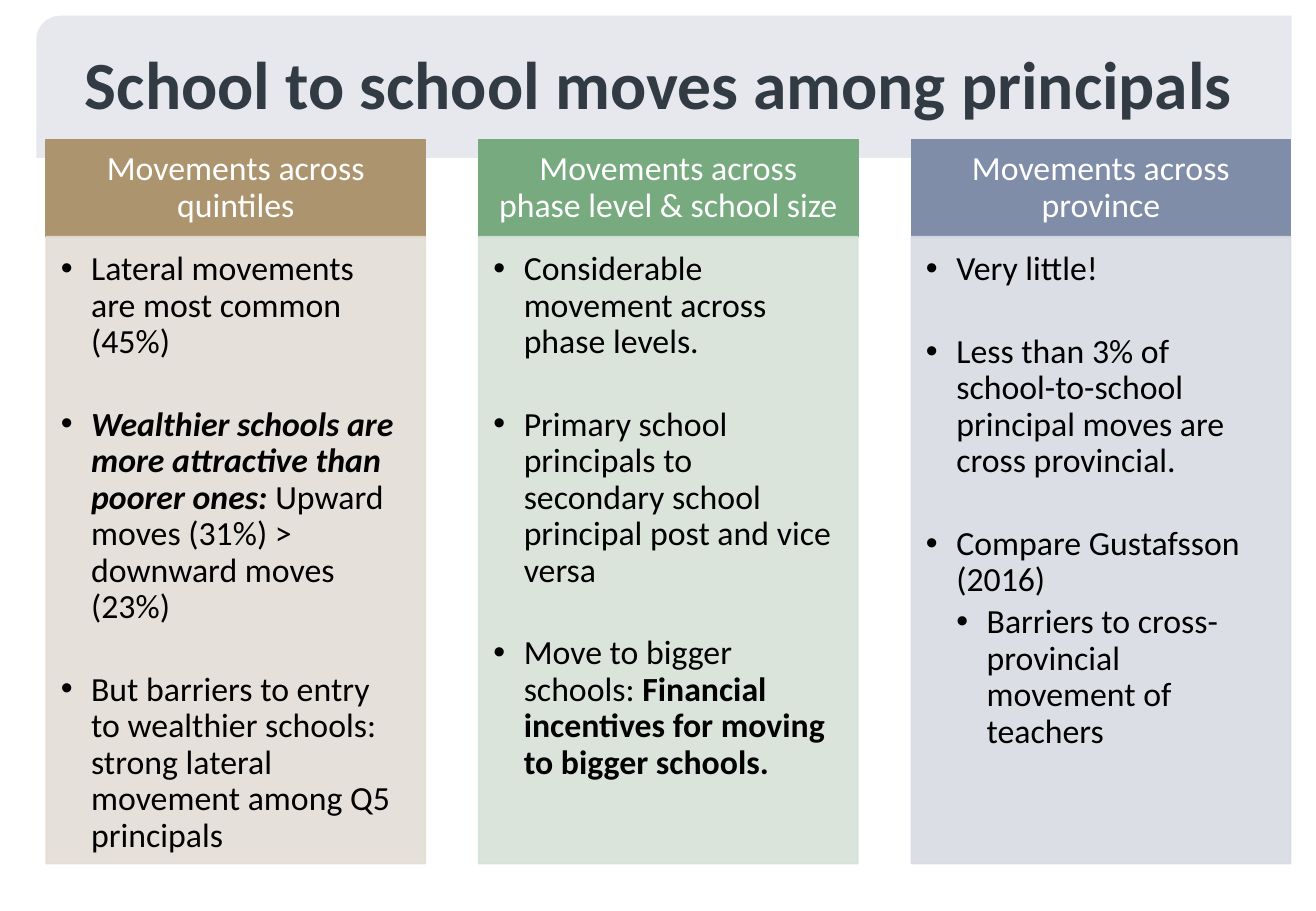
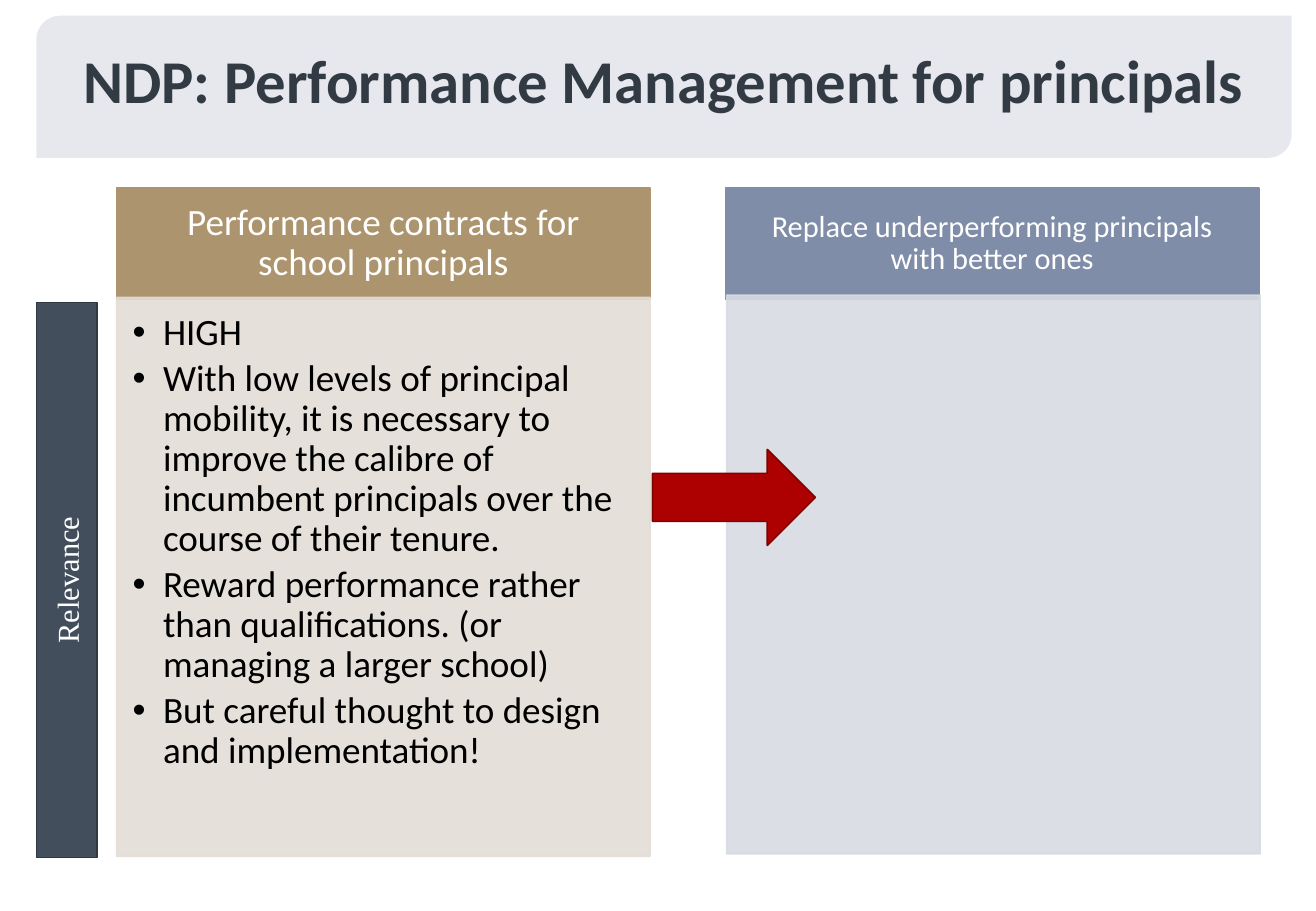
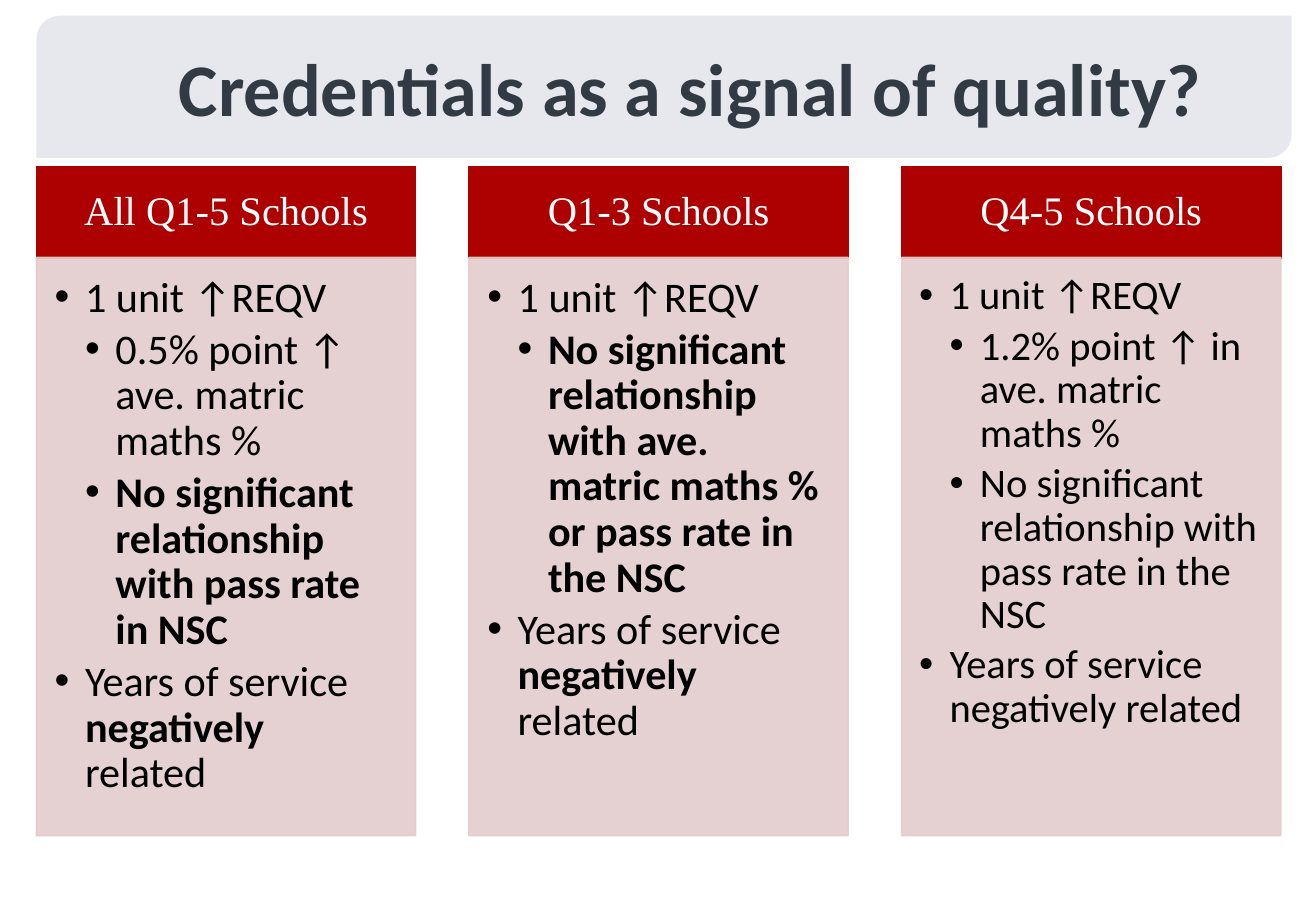
from lxml.etree import SubElement
from pptx import Presentation
from pptx.dml.color import RGBColor
from pptx.enum.shapes import MSO_SHAPE as Shape
from pptx.enum.text import MSO_ANCHOR as Anchor, MSO_AUTO_SIZE as AutoSize, PP_ALIGN as Align
from pptx.oxml.ns import qn
from pptx.util import Inches, Pt

COLORS = {
    "band": "E6E8EE", "title": "323B44", "white": "FFFFFF", "black": "000000",
    "tan": "AC956E", "tan_light": "E3DDD5",
    "green": "77AA7F", "green_light": "D6E2D8",
    "blue": "808DA9", "blue_light": "D8DBE2",
    "red": "AD0101", "red_light": "E3CCCC", "red_dark": "800101",
    "slate": "424E5B", "slate_dark": "313A43",
}
SANS, SERIF = "Calibri", "Times New Roman"
COLUMN_WIDTH, COLUMN_PITCH = 3.12, 3.56
INDENT = 0.25


def color(name):
    return RGBColor.from_string(COLORS[name])


def style_font(font, size, color_name, name=SANS, bold=False, italic=False):
    font.name, font.size = name, Pt(size)
    font.bold, font.italic = bold, italic
    font.color.rgb = color(color_name)


def set_insets(frame, *insets):
    sides = ("margin_left", "margin_top", "margin_right", "margin_bottom")
    for side, inset in zip(sides, insets):
        setattr(frame, side, Inches(inset))


def add_box(slide, kind, place, fill, line=None):
    box = slide.shapes.add_shape(kind, *map(Inches, place))
    box.shadow.inherit = False
    box.fill.solid()
    box.fill.fore_color.rgb = color(fill)
    if line:
        box.line.color.rgb = color(line)
        box.line.width = Pt(1)
    else:
        box.line.fill.background()
    box.text_frame.word_wrap = True
    return box


def add_label(box, text, size, font_name=SANS):
    frame = box.text_frame
    frame.text = text
    frame.vertical_anchor = Anchor.MIDDLE
    para = frame.paragraphs[0]
    para.alignment = Align.CENTER
    style_font(para.runs[0].font, size, "white", font_name)


def add_heading(slide, place, text, fill, size, font_name=SANS):
    box = add_box(slide, Shape.RECTANGLE, place, fill, fill)
    add_label(box, text, size, font_name)
    box.text_frame.paragraphs[0].line_spacing = 0.9
    across, down = size * 0.008, size * 0.0045
    set_insets(box.text_frame, across, down, across, down)


def add_bullet(para, level):
    props = para._p.get_or_add_pPr()
    props.set("marL", str(Inches(INDENT * level)))
    props.set("indent", str(-Inches(INDENT)))
    SubElement(props, qn("a:buFont")).set("typeface", "Arial")
    SubElement(props, qn("a:buChar")).set("char", "•")


def add_panel(slide, place, fill, items=(), size=20, gap=None):
    """Each item is (level, run, ...); a run is a text or (text, "b" and/or "i")."""
    box = add_box(slide, Shape.RECTANGLE, place, fill, fill)
    for tint in box.element.spPr.iter(qn("a:srgbClr")):
        SubElement(tint, qn("a:alpha")).set("val", "90000")
    frame = box.text_frame
    frame.vertical_anchor = Anchor.TOP
    set_insets(frame, size * 0.006, size * 0.006, size * 0.008, size * 0.0086)
    tight = round(size * 0.16, 1)
    for index, (level, *runs) in enumerate(items):
        para = frame.add_paragraph() if index else frame.paragraphs[0]
        add_bullet(para, level)
        para.alignment = Align.LEFT
        para.line_spacing = 0.9
        if index:
            para.space_before = Pt(gap if gap and level == 1 else tight)
        for run in runs:
            text, style = (run, "") if isinstance(run, str) else run
            span = para.add_run()
            span.text = text
            style_font(span.font, size, "black", bold="b" in style, italic="i" in style)


def add_band(deck, layout):
    """Put the title band on the layout, behind its placeholders."""
    slide = deck.slides[0]
    band = add_box(slide, Shape.ROUND_2_DIAG_RECTANGLE, (0.3, 0.13, 10.33, 1.17), "band")
    layout.shapes.element.insert(2, band.element)


def add_titled_slide(deck, layout, text, size, left, width):
    slide = deck.slides.add_slide(layout)
    title = slide.shapes.title
    title.left, title.top, title.width, title.height = map(Inches, (left, 0.3, width, 1.25))
    frame = title.text_frame
    frame.text = text
    frame.word_wrap = True
    frame.auto_size = AutoSize.NONE
    frame.vertical_anchor = Anchor.TOP
    para = frame.paragraphs[0]
    para.alignment = Align.CENTER
    style_font(para.runs[0].font, size, "title", bold=True)
    return slide


def build_moves(slide):
    columns = [
        ("Movements across quintiles", "tan", [
            (1, "Lateral movements are most common (45%)"),
            (1, ("Wealthier schools are more attractive than poorer ones: ", "bi"),
             "Upward moves (31%) > downward moves (23%)"),
            (1, "But barriers to entry to wealthier schools: strong lateral movement "
                "among Q5 principals"),
        ]),
        ("Movements across phase level & school size", "green", [
            (1, "Considerable movement across phase levels."),
            (1, "Primary school principals to secondary school principal post and vice versa"),
            (1, "Move to bigger schools: ",
             ("Financial incentives for moving to bigger schools.", "b")),
        ]),
        ("Movements across province", "blue", [
            (1, "Very little!"),
            (1, "Less than 3% of school-to-school principal moves are cross provincial."),
            (1, "Compare Gustafsson (2016)"),
            (2, "Barriers to cross-provincial movement of teachers"),
        ]),
    ]
    for index, (heading, hue, items) in enumerate(columns):
        left = 0.38 + index * COLUMN_PITCH
        add_heading(slide, (left, 1.15, COLUMN_WIDTH, 0.8), heading, hue, 20)
        add_panel(slide, (left, 1.95, COLUMN_WIDTH, 5.16), hue + "_light", items, gap=27.5)


def build_performance(slide):
    add_heading(slide, (0.96, 1.55, 4.39, 0.91),
                "Performance contracts for school principals", "tan", 22)
    add_panel(slide, (0.96, 2.45, 4.39, 4.6), "tan_light", [
        (1, "HIGH"),
        (1, "With low levels of principal mobility, it is necessary to improve the "
            "calibre of incumbent principals over the course of their tenure."),
        (1, "Reward performance rather than qualifications. (or managing a larger school)"),
        (1, "But careful thought to design and implementation!"),
    ], 22)
    add_heading(slide, (5.97, 1.55, 4.39, 0.91),
                "Replace underperforming principals with better ones", "blue", 18)
    add_panel(slide, (5.98, 2.43, 4.39, 4.6), "blue_light")

    # Side label, read upwards
    side = add_box(slide, Shape.RECTANGLE, (0.3, 2.49, 0.5, 4.57), "slate", "slate_dark")
    add_label(side, "Relevance", 18, SERIF)
    side.text_frame._txBody.bodyPr.set("vert", "vert270")

    add_box(slide, Shape.RIGHT_ARROW, (5.37, 3.7, 1.34, 0.79), "red", "red_dark")


def build_credentials(slide):
    unit = (1, "1 unit ↑REQV")
    service = (1, "Years of service ", ("negatively", "b"), " related")
    columns = [
        ("All Q1-5 Schools", 25, [
            unit,
            (2, "0.5% point ↑ ave. matric maths %"),
            (2, ("No significant relationship with pass rate in NSC", "b")),
            service,
        ]),
        ("Q1-3 Schools", 25, [
            unit,
            (2, ("No significant relationship with ave. matric maths % "
                 "or pass rate in the NSC", "b")),
            service,
        ]),
        ("Q4-5 Schools", 24, [
            unit,
            (2, "1.2% point ↑ in ave. matric maths %"),
            (2, "No significant relationship with pass rate in the NSC"),
            (1, "Years of service negatively related"),
        ]),
    ]
    for index, (heading, size, items) in enumerate(columns):
        left = 0.3 + index * COLUMN_PITCH
        add_heading(slide, (left, 1.37, COLUMN_WIDTH, 0.76), heading, "red", 24, SERIF)
        add_panel(slide, (left, 2.12, COLUMN_WIDTH, 4.76), "red_light", items, size)


def main():
    deck = Presentation()
    deck.slide_width, deck.slide_height = Inches(10.83), Inches(7.5)
    layout = deck.slide_layouts.get_by_name("Title Only")
    pages = [
        ("School to school moves among principals", 40, 0.3, 10.24, build_moves),
        ("NDP: Performance Management for principals", 36, 0.3, 10.32, build_performance),
        ("Credentials as a signal of quality?", 44, 1.07, 9.23, build_credentials),
    ]
    for text, size, left, width, build in pages:
        build(add_titled_slide(deck, layout, text, size, left, width))
    add_band(deck, layout)
    deck.save("out.pptx")


if __name__ == "__main__":
    main()
